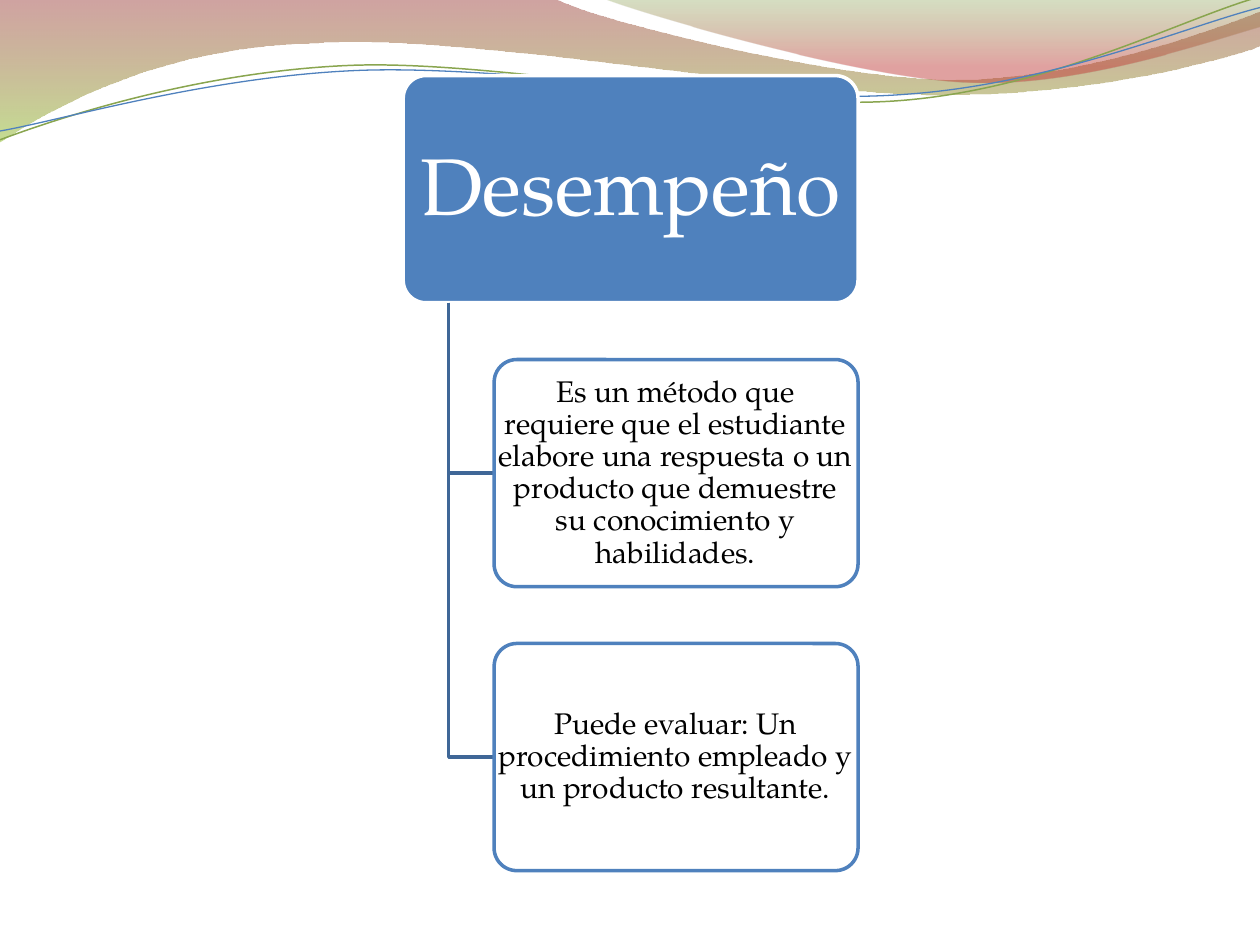
import pptx
import pptx.dml.color
import pptx.enum.shapes
import pptx.enum.text
import pptx.oxml
import pptx.oxml.ns
import pptx.util

Inches = pptx.util.Inches
Pt = pptx.util.Pt
FONT = "TeX Gyre Pagella"
BLUE, WHITE, BLACK, BRANCH = "4F81BD", "FFFFFF", "000000", "3F6797"

LEFT_WAVE = [
    (0, 0), (4.4, -0.01),
    (4.76, 0.17, 6.64, 0.63, 7.58, 0.63), (8.53, 0.63, 9.58, 0.26, 10, 0.09),
    (10.01, 0.36),
    (9.83, 0.44, 8.7, 0.76, 7.46, 0.75), (6.22, 0.75, 3.82, 0.28, 2.57, 0.34),
    (1.29, 0.36, 0.46, 0.83, -0.01, 1.13),
]
RIGHT_WAVE = [
    (4.79, -0.01), (5.09, 0.11, 6.82, 0.62, 7.69, 0.65),
    (8.56, 0.69, 9.61, 0.32, 10, 0.21), (10, 0),
]
GREEN_CURVE = [
    (0, 1.11), (0.48, 0.93, 1.58, 0.57, 2.77, 0.52),
    (3.95, 0.47, 5.93, 0.89, 7.13, 0.8), (8.33, 0.71, 9.38, 0.15, 9.98, -0.02),
]
BLUE_CURVE = [
    (0, 1.04), (0.47, 0.96, 1.64, 0.61, 2.83, 0.56),
    (4.03, 0.51, 5.97, 0.84, 7.17, 0.75), (8.36, 0.67, 9.41, 0.21, 10, 0.06),
]
DETAILS = [
    "Es un método que requiere que el estudiante elabore una respuesta o un "
    "producto que demuestre su conocimiento y habilidades.",
    "Puede evaluar: Un procedimiento empleado y un producto resultante.",
]


def rgb(color):
    """Turn a hex string into a colour."""
    return pptx.dml.color.RGBColor.from_string(color)


def set_opacity(fill_element, percents):
    """Give each colour inside a fill its opacity."""
    colors = fill_element.iter(pptx.oxml.ns.qn("a:srgbClr"))
    for color, percent in zip(colors, percents):
        alpha = pptx.oxml.parse_xml(f'<a:alpha {pptx.oxml.ns.nsdecls("a")} val="{percent * 1000}"/>')
        color.append(alpha)


def set_line(shape, color, width):
    """Set the outline colour and width."""
    shape.line.color.rgb = rgb(color)
    shape.line.width = Pt(width)


def bend(segment, points):
    """Replace a straight segment by a cubic curve through local points."""
    marks = "".join(f'<a:pt x="{x}" y="{y}"/>' for x, y in points)
    curve = f'<a:cubicBezTo {pptx.oxml.ns.nsdecls("a")}>{marks}</a:cubicBezTo>'
    segment.getparent().replace(segment, pptx.oxml.parse_xml(curve))


def add_outline(page, steps, left=0, top=0, close=False):
    """Draw points and cubic curves relative to a corner, without fill."""
    places = [
        [(Inches(left + x), Inches(top + y)) for x, y in zip(step[::2], step[1::2])]
        for step in steps
    ]
    ends = [place[-1] for place in places]
    builder = page.shapes.build_freeform(*ends[0])
    builder.add_line_segments(ends[1:], close=close)
    shape = builder.convert_to_shape()
    segments = list(shape.element.spPr.iter(pptx.oxml.ns.qn("a:lnTo")))
    for segment, place in zip(segments, places[1:]):
        if len(place) == 3:
            bend(segment, [(x - shape.left, y - shape.top) for x, y in place])
    shape.shadow.inherit = False
    shape.fill.background()
    return shape


def add_wave(page, steps, stops, left, top):
    """Draw a closed wave with a vertical gradient."""
    shape = add_outline(page, steps, left, top, close=True)
    shape.line.fill.background()
    shape.fill.gradient()
    shape.fill.gradient_angle = 270
    for stop, (position, color, _) in zip(shape.fill.gradient_stops, stops):
        stop.position = position
        stop.color.rgb = rgb(color)
    gradient = shape.element.spPr.find(pptx.oxml.ns.qn("a:gradFill"))
    set_opacity(gradient, [opacity for _, _, opacity in stops])


def add_header(page, left, top):
    """Draw the waves and thin curves along the top."""
    add_wave(page, LEFT_WAVE, [(0, "973330", 45), (1, "95C238", 55)], left, top)
    add_wave(page, RIGHT_WAVE, [(0, "769537", 30), (0.8, "BE3330", 45)], left, top)
    set_line(add_outline(page, GREEN_CURVE, left, top), "89A54F", 0.85)
    set_line(add_outline(page, BLUE_CURVE, left, top), BLUE, 0.75)


def add_card(page, left, top, width, height, text, size, colors, opacity, insets):
    """Draw a rounded card with centred text over it."""
    fill, line, ink = colors
    box = [Inches(value) for value in (left, top, width, height)]
    card = page.shapes.add_shape(pptx.enum.shapes.MSO_SHAPE.ROUNDED_RECTANGLE, *box)
    card.shadow.inherit = False
    card.adjustments[0] = 0.1
    card.fill.solid()
    card.fill.fore_color.rgb = rgb(fill)
    if opacity < 100:
        set_opacity(card.element.spPr.find(pptx.oxml.ns.qn("a:solidFill")), [opacity])
    set_line(card, line, 2)

    frame = page.shapes.add_textbox(*box).text_frame
    frame.word_wrap = True
    frame.vertical_anchor = pptx.enum.text.MSO_ANCHOR.MIDDLE
    frame.margin_left, frame.margin_right = Inches(insets[0]), Inches(insets[1])
    frame.margin_top = frame.margin_bottom = Inches(insets[2])
    frame.text = text
    para = frame.paragraphs[0]
    para.alignment = pptx.enum.text.PP_ALIGN.CENTER
    para.line_spacing = 0.9
    font = para.runs[0].font
    font.name, font.size = FONT, Pt(size)
    font.color.rgb = rgb(ink)


def add_hierarchy(page, left, top, width, height):
    """Draw the heading card and the detail cards that hang from it."""
    card_height = height / 3.5
    pitch = card_height * 1.25
    indent = width * 0.2
    trunk = width * 0.1
    add_card(page, left, top, width, card_height, "Desempeño", 46,
             (BLUE, WHITE, WHITE), 100, (0.1, 0.1, 0.06))
    for row, text in enumerate(DETAILS, start=1):
        middle = row * pitch + card_height / 2
        elbow = [(trunk, card_height), (trunk, middle), (indent, middle)]
        set_line(add_outline(page, elbow, left, top), BRANCH, 2)
        add_card(page, left + indent, top + row * pitch, width - indent, card_height,
                 text, 17, (WHITE, BLUE, BLACK), 90, (0.03, 0.04, 0.02))


def main():
    """Build the slide and save it."""
    deck = pptx.Presentation()
    deck.slide_width, deck.slide_height = Inches(10), Inches(7.5)
    page = deck.slides.add_slide(deck.slide_layouts[6])
    add_header(page, 0, 0)
    add_hierarchy(page, 3.2, 0.6, 3.61, 6.31)
    deck.save("out.pptx")


if __name__ == "__main__":
    main()
